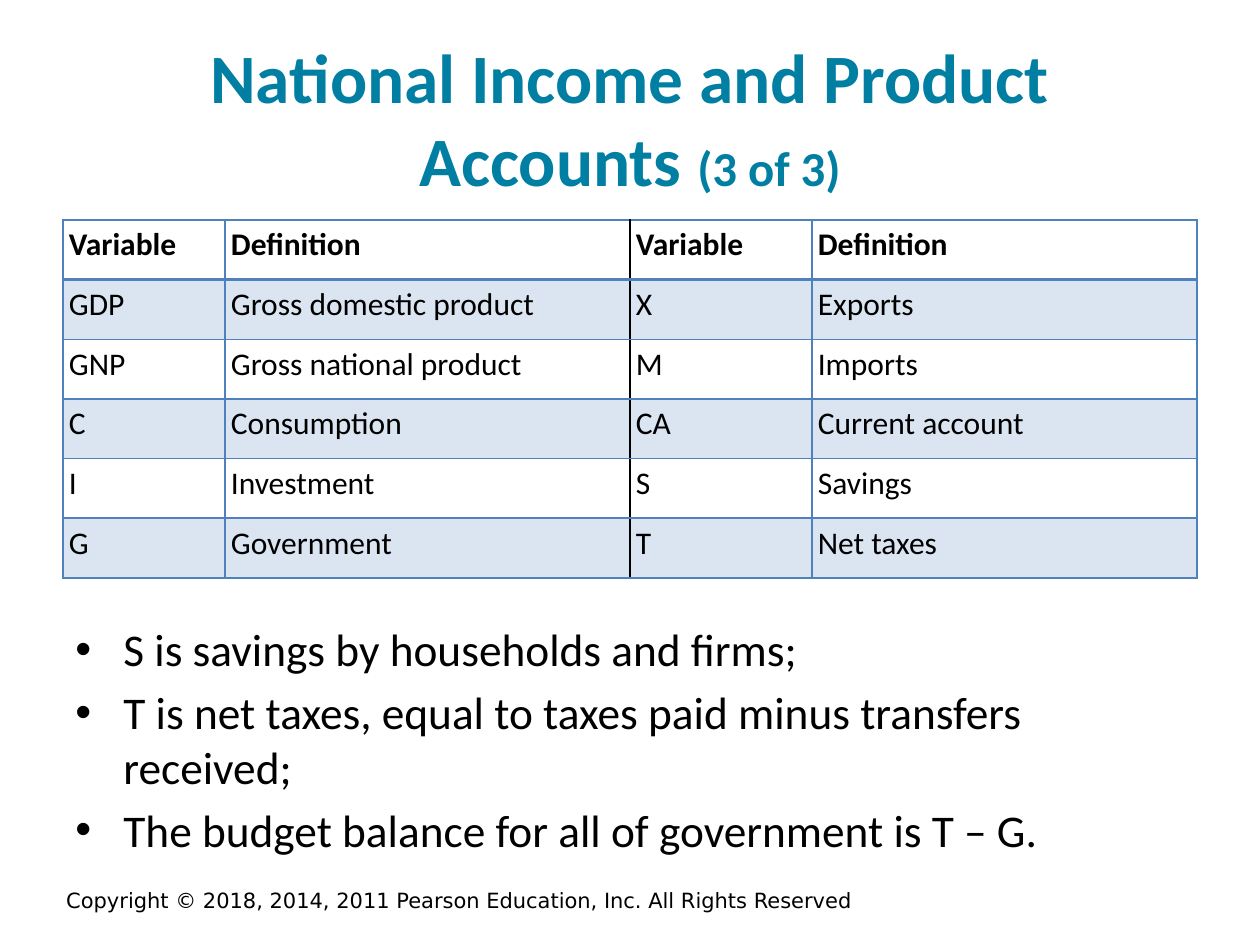
from dataclasses import dataclass

from lxml import etree
from pptx import Presentation
from pptx.dml.color import RGBColor
from pptx.enum.text import MSO_ANCHOR, PP_ALIGN
from pptx.oxml.ns import qn
from pptx.util import Pt

MIDDLE, TOP = MSO_ANCHOR.MIDDLE, MSO_ANCHOR.TOP
CENTER, LEFT = PP_ALIGN.CENTER, PP_ALIGN.LEFT
SCALE = 914400 / 126


@dataclass(frozen=True)
class Theme:
    font: str = "Calibri"
    foot_font: str = "DejaVu Sans"
    ink: str = "000000"
    teal: str = "007FA3"
    blue: str = "4F81BD"
    tint: int = 20
    title: float = 39.6
    count: float = 27.9
    cell: float = 18
    body: float = 25.9
    foot: float = 12


THEME = Theme()

ROWS = [
    ("Variable", "Definition", "Variable", "Definition"),
    ("GDP", "Gross domestic product", "X", "Exports"),
    ("GNP", "Gross national product", "M", "Imports"),
    ("C", "Consumption", "CA", "Current account"),
    ("I", "Investment", "S", "Savings"),
    ("G", "Government", "T", "Net taxes"),
]
WIDTHS = (162, 405, 182, 385)
POINTS = (
    "S is savings by households and firms;",
    "T is net taxes, equal to taxes paid minus transfers received;",
    "The budget balance for all of government is T – G.",
)
COPYRIGHT = "Copyright © 2018, 2014, 2011 Pearson Education, Inc. All Rights Reserved"


def px(n):
    return round(n * SCALE)


def style(font, size, color=THEME.ink, name=THEME.font, bold=False):
    font.name, font.size, font.bold = name, Pt(size), bold
    font.color.rgb = RGBColor.from_string(color)


def add_box(slide, at, anchor=MIDDLE):
    frame = slide.shapes.add_textbox(*map(px, at)).text_frame
    frame.word_wrap = True
    frame.vertical_anchor = anchor
    return frame


def add_title(slide):
    para = add_box(slide, (63, 38, 1134, 158)).paragraphs[0]
    para.alignment = CENTER
    style(para.font, THEME.title, THEME.teal, bold=True)
    para.add_run().text = "National Income and Product Accounts "
    count = para.add_run()
    count.text = "(3 of 3)"
    count.font.size = Pt(THEME.count)


def add_footer(slide):
    para = add_box(slide, (-18, 878, 955, 45)).paragraphs[0]
    para.text = COPYRIGHT
    para.alignment = CENTER
    style(para.font, THEME.foot, name=THEME.foot_font)


def add_points(slide):
    frame = add_box(slide, (63, 615, 1134, 229), TOP)
    for i, text in enumerate(POINTS):
        para = frame.paragraphs[0] if i == 0 else frame.add_paragraph()
        para.text = text
        props = para._p.get_or_add_pPr()
        props.set("marL", str(px(48)))
        props.set("indent", str(px(-48)))
        etree.SubElement(props, qn("a:buFont"), typeface="Arial")
        etree.SubElement(props, qn("a:buChar"), char="•")
        para.alignment = LEFT
        if i:
            para.space_before = Pt(5)
        style(para.font, THEME.body)


def add_border(cell, side, color, width):
    line = etree.SubElement(cell._tc.get_or_add_tcPr(), qn("a:" + side), w=str(int(Pt(width))))
    fill = etree.SubElement(line, qn("a:solidFill"))
    etree.SubElement(fill, qn("a:srgbClr"), val=color)


def fill_cell(cell, shaded):
    if not shaded:
        cell.fill.background()
        return
    cell.fill.solid()
    cell.fill.fore_color.rgb = RGBColor.from_string(THEME.blue)
    color = cell._tc.tcPr.find(qn("a:solidFill") + "/" + qn("a:srgbClr"))
    etree.SubElement(color, qn("a:alpha"), val=str(THEME.tint * 1000))


def frame_cell(cell, row, col):
    """Draw the black middle rule and the heavier rule below the header."""
    add_border(cell, "lnL", THEME.ink if col == 2 else THEME.blue, 1)
    add_border(cell, "lnR", THEME.ink if col == 1 else THEME.blue, 1)
    add_border(cell, "lnT", THEME.blue, 2 if row == 1 else 1)
    add_border(cell, "lnB", THEME.blue, 2 if row == 0 else 1)


def add_grid(slide):
    shape = slide.shapes.add_table(len(ROWS), len(WIDTHS), *map(px, (63, 220, 1134, 358)))
    table = shape.table
    table.first_row = table.horz_banding = False
    for col, width in zip(table.columns, WIDTHS):
        col.width = px(width)
    for r, row in enumerate(ROWS):
        for c, text in enumerate(row):
            cell = table.cell(r, c)
            cell.margin_left = cell.margin_right = px(6)
            cell.margin_top = cell.margin_bottom = px(6)
            para = cell.text_frame.paragraphs[0]
            para.text = text
            style(para.font, THEME.cell, bold=r == 0)
            frame_cell(cell, r, c)
            fill_cell(cell, r % 2 == 1)


def main():
    deck = Presentation()
    deck.slide_width, deck.slide_height = px(1260), px(945)
    slide = deck.slides.add_slide(deck.slide_layouts[6])
    add_footer(slide)
    add_title(slide)
    add_grid(slide)
    add_points(slide)
    deck.save("out.pptx")


if __name__ == "__main__":
    main()
